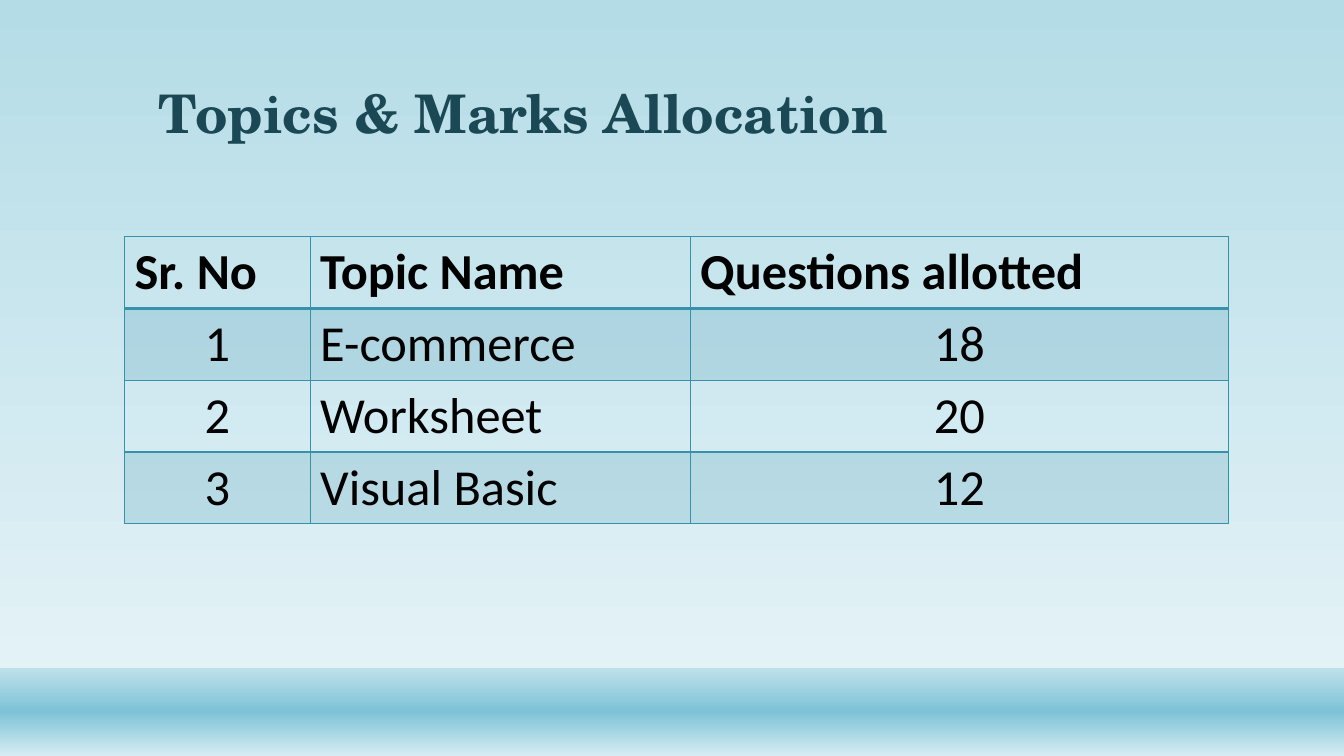
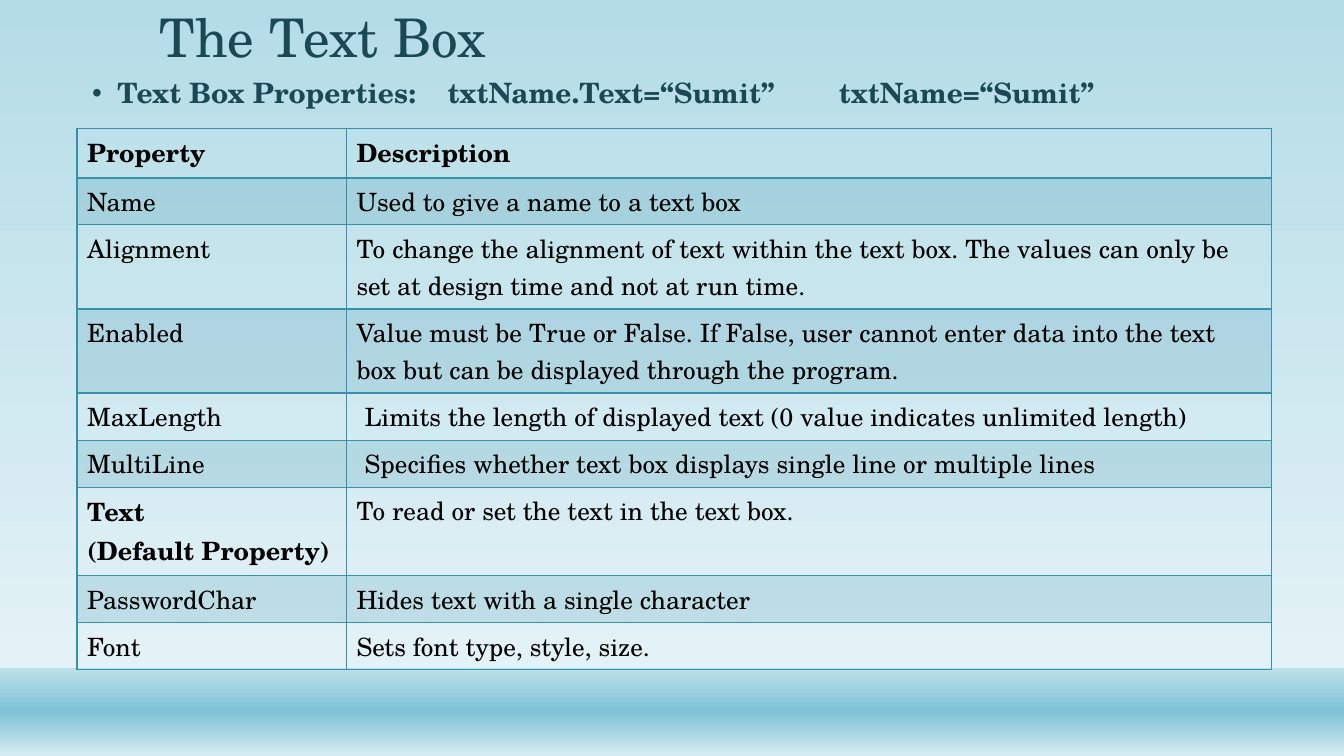
from copy import deepcopy

from lxml import etree
from pptx import Presentation
from pptx.dml.color import RGBColor
from pptx.enum.shapes import MSO_SHAPE
from pptx.enum.text import MSO_ANCHOR, MSO_AUTO_SIZE, PP_ALIGN
from pptx.oxml.ns import qn
from pptx.util import Pt

RECTANGLE = MSO_SHAPE.RECTANGLE
BOTTOM, TOP = MSO_ANCHOR.BOTTOM, MSO_ANCHOR.TOP
NO_AUTOFIT = MSO_AUTO_SIZE.NONE
LEFT, CENTER = PP_ALIGN.LEFT, PP_ALIGN.CENTER

TITLE_CONTENT, TITLE_ONLY = 1, 5
SERIF, SANS = "TeX Gyre Schola", "Calibri"
INK, BLACK, TEAL = "1B4855", "000000", "3691AA"
SKY = [(0, "B4DCE7"), (0.88, "E3F2F6")]
WATER = [(0.01, "BCE0EA"), (0.49, "7DC2D6"), (1, "D6ECF2")]
TINT_ALPHA = "20000"


def color(value):
    return RGBColor.from_string(value)


def put(frame, text, font=SERIF, size=18, ink=BLACK, bold=False, align=LEFT, spacing=None):
    for index, line in enumerate(text.split("\n")):
        paragraph = frame.add_paragraph() if index else frame.paragraphs[0]
        paragraph.alignment = align
        paragraph.line_spacing = spacing
        run = paragraph.add_run()
        run.text = line
        run.font.name, run.font.size, run.font.bold = font, Pt(size), bold
        run.font.color.rgb = color(ink)


def blend(fill, element, stops):
    fill.gradient()
    fill.gradient_angle = 270
    stop_list = element.find(".//" + qn("a:gsLst"))
    while len(stop_list) < len(stops):
        stop_list.append(deepcopy(stop_list[-1]))
    for stop, (position, shade) in zip(fill.gradient_stops, stops):
        stop.position = position
        stop.color.rgb = color(shade)


def border(cell, sides):
    properties = cell._tc.get_or_add_tcPr()
    for side, width in sides.items():
        line = etree.SubElement(properties, qn("a:ln" + side), w=str(Pt(width)))
        solid = etree.SubElement(line, qn("a:solidFill"))
        etree.SubElement(solid, qn("a:srgbClr"), val=TEAL)


class Deck:
    """Holds the shared style and the slide being built."""

    def __init__(self):
        self.presentation = Presentation()
        self.presentation.slide_width = Pt(960)
        self.presentation.slide_height = Pt(540)
        self.slide = None
        master = self.presentation.slide_master
        blend(master.background.fill, master.element, SKY)

    def add_slide(self, layout):
        self.slide = self.presentation.slides.add_slide(self.presentation.slide_layouts[layout])

    def place(self, placeholder, box, anchor):
        placeholder.left, placeholder.top, placeholder.width, placeholder.height = map(Pt, box)
        frame = placeholder.text_frame
        frame.word_wrap = True
        frame.auto_size = NO_AUTOFIT
        frame.vertical_anchor = anchor
        return frame

    def master_band(self, box):
        band = self.slide.shapes.add_shape(RECTANGLE, *map(Pt, box))
        band.shadow.inherit = False
        band.line.fill.background()
        blend(band.fill, band.element, WATER)
        band.element.nvSpPr.cNvPr.set("id", "100")
        self.presentation.slide_master.shapes.element.insert(2, band.element)

    def title(self, text, box, bold=False):
        frame = self.place(self.slide.shapes.title, box, BOTTOM)
        put(frame, text, size=38, ink=INK, bold=bold, spacing=0.9)

    def bullet(self, text, box, tabs):
        frame = self.place(self.slide.placeholders[1], box, TOP)
        properties = frame.paragraphs[0]._p.get_or_add_pPr()
        properties.set("marL", str(Pt(21.6)))
        properties.set("indent", str(Pt(-18)))
        etree.SubElement(properties, qn("a:buFont"), typeface="Arial")
        etree.SubElement(properties, qn("a:buChar"), char="•")
        tab_list = etree.SubElement(properties, qn("a:tabLst"))
        for position in tabs:
            etree.SubElement(tab_list, qn("a:tab"), pos=str(Pt(position)), algn="l")
        put(frame, text, size=20, ink=INK, bold=True, spacing=0.9)
        frame.paragraphs[0].space_before = Pt(0)

    def table(self, rows, left, top, widths, heights, font, size, centered=(), strong=()):
        table = self.slide.shapes.add_table(
            len(rows), len(widths), Pt(left), Pt(top), Pt(sum(widths)), Pt(sum(heights))
        ).table
        table.first_row = table.horz_banding = False
        for column, width in zip(table.columns, widths):
            column.width = Pt(width)
        for r, (texts, height) in enumerate(zip(rows, heights)):
            table.rows[r].height = Pt(height)
            for c, text in enumerate(texts):
                cell = table.cell(r, c)
                border(cell, {"L": 1, "R": 1, "T": 2 if r == 1 else 1, "B": 1 if r else 2})
                if r % 2:
                    cell.fill.solid()
                    cell.fill.fore_color.rgb = color(TEAL)
                    tint = cell._tc.tcPr.find(qn("a:solidFill") + "/" + qn("a:srgbClr"))
                    etree.SubElement(tint, qn("a:alpha"), val=TINT_ALPHA)
                else:
                    cell.fill.background()
                put(cell.text_frame, text, font=font, size=size,
                    bold=r == 0 or (r, c) in strong,
                    align=CENTER if r and c in centered else LEFT)
        return table


def main():
    deck = Deck()

    deck.add_slide(TITLE_ONLY)
    deck.master_band((0, 477.5, 960, 62.5))
    deck.title("Topics & Marks Allocation", (106, 21, 749, 86), bold=True)
    topics = [
        ("Sr. No", "Topic Name", "Questions allotted"),
        ("1", "E-commerce", "18"),
        ("2", "Worksheet", "20"),
        ("3", "Visual Basic", "12"),
    ]
    deck.table(topics, 89, 169, (132.5, 271.5, 384.5), [51] * len(topics),
               SANS, 36, centered=(0, 2))

    deck.add_slide(TITLE_CONTENT)
    deck.title("The Text Box", (107, 5, 788, 48))
    deck.bullet("Text Box Properties:\ttxtName.Text=“Sumit”\ttxtName=“Sumit”",
                (55, 53, 876, 36), tabs=(257.5, 537))
    properties = [
        ("Property", "Description"),
        ("Name", "Used to give a name to a text box"),
        ("Alignment", "To change the alignment of text within the text box. "
                      "The values can only be set at design time and not at run time."),
        ("Enabled", "Value must be True or False. If False, user cannot enter data "
                    "into the text box but can be displayed through the program."),
        ("MaxLength", "Limits the length of displayed text (0 value indicates unlimited length)"),
        ("MultiLine", "Specifies whether text box displays single line or multiple lines"),
        ("Text\n(Default Property)", "To read or set the text in the text box."),
        ("PasswordChar", "Hides text with a single character"),
        ("Font", "Sets font type, style, size."),
    ]
    one_line, two_lines = 33.5, 60
    heights = [35.5, one_line, two_lines, two_lines, one_line, one_line, 63, one_line, one_line]
    property_table = deck.table(properties, 55, 91.5, (192.5, 660.5), heights,
                                SERIF, 18, strong={(6, 0)})
    for indented_row in (4, 5):
        property_table.cell(indented_row, 1).margin_left = Pt(13)

    deck.presentation.save("out.pptx")


if __name__ == "__main__":
    main()
